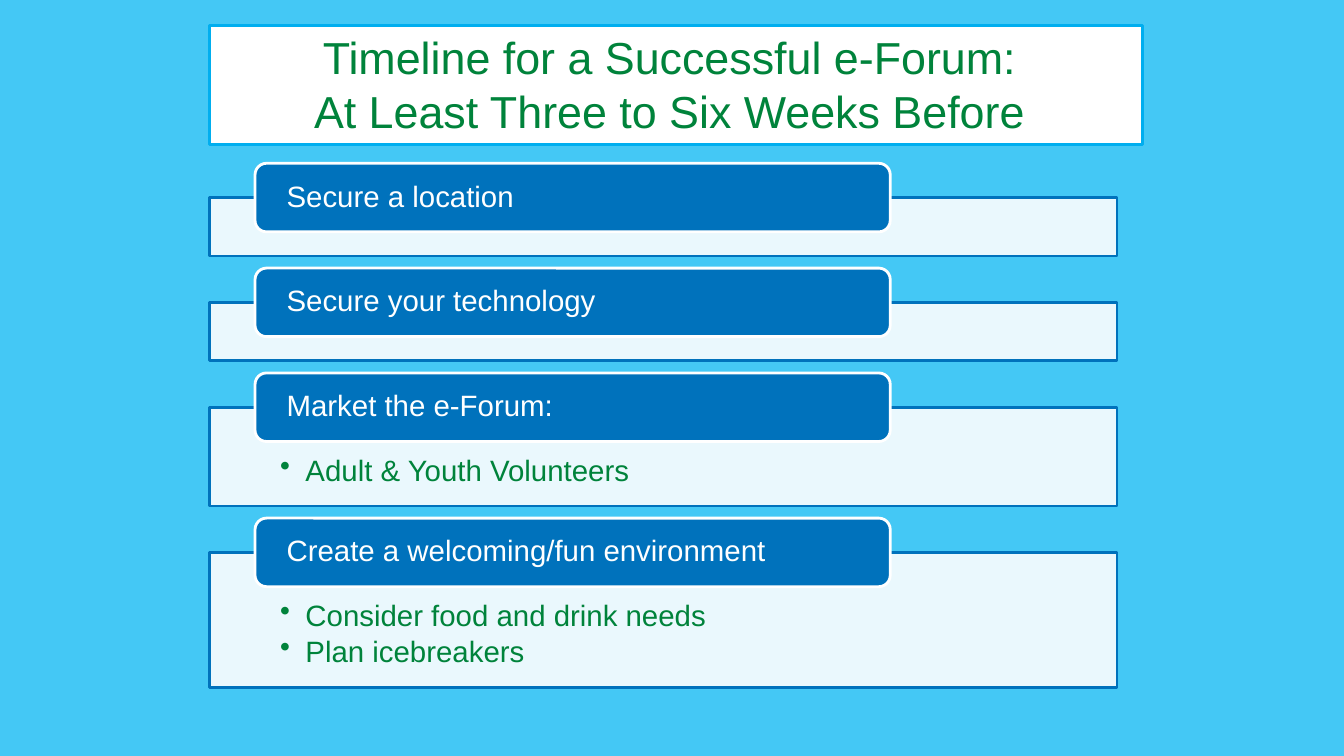
from lxml.etree import SubElement
from pptx import Presentation
from pptx.dml.color import RGBColor
from pptx.enum.shapes import MSO_SHAPE
from pptx.enum.text import MSO_ANCHOR, PP_ALIGN
from pptx.oxml.ns import qn
from pptx.util import Inches, Pt

SKY, CYAN, BLUE, GREEN, WHITE = "44C8F5", "00AEEF", "0072BC", "00833B", "FFFFFF"
LEFT, WIDTH, GAP = 2.08, 9, 0.46
PILL_HEIGHT, PILL_RISE = 0.68, 0.34
TITLE = "Timeline for a Successful e-Forum: \vAt Least Three to Six Weeks Before "
SECTIONS = [
    ("Secure a location", [], 0.58),
    ("Secure your technology", [], 0.58),
    ("Market the e-Forum:", ["Adult & Youth Volunteers"], 0.98),
    ("Create a welcoming/fun environment",
     ["Consider food and drink needs", "Plan icebreakers"], 1.34),
]


def paint(color_format, color):
    color_format.rgb = RGBColor.from_string(color)


def add_panel(s, kind, box, fill, line):
    sp = s.shapes.add_shape(kind, *[Inches(v) for v in box])
    sp.shadow.inherit = False
    sp.fill.solid()
    paint(sp.fill.fore_color, fill)
    paint(sp.line.color, line)
    sp.line.width = Pt(2)
    return sp


def write(sp, lines, size, color, insets, frame=None, para=None):
    tf = sp.text_frame
    sides = ("margin_left", "margin_top", "margin_right", "margin_bottom")
    formats = dict(zip(sides, [Inches(v) for v in insets]))
    for name, value in {**formats, "word_wrap": True, **(frame or {})}.items():
        setattr(tf, name, value)
    for i, line in enumerate(lines):
        p = tf.paragraphs[0] if i == 0 else tf.add_paragraph()
        p.text = line
        for name, value in (para or {}).items():
            setattr(p, name, value)
        for r in p.runs:
            for name, value in {"name": "Arial", "size": Pt(size)}.items():
                setattr(r.font, name, value)
            paint(r.font.color, color)
    return tf.paragraphs


def add_bullet(p, color):
    pPr = p._p.get_or_add_pPr()
    pPr.set("marL", str(Inches(0.25)))
    pPr.set("indent", str(-Inches(0.25)))
    SubElement(SubElement(pPr, qn("a:buClr")), qn("a:srgbClr"), val=color)
    SubElement(pPr, qn("a:buChar"), char="•")


def add_title(s, box):
    sp = add_panel(s, MSO_SHAPE.RECTANGLE, box, WHITE, CYAN)
    write(sp, [TITLE], 32, GREEN, (0.1, 0.05, 0.1, 0.05),
          {"vertical_anchor": MSO_ANCHOR.TOP}, {"alignment": PP_ALIGN.CENTER})


def add_section(s, box, heading, items):
    left, top, width, height = box
    body = add_panel(s, MSO_SHAPE.RECTANGLE, box, WHITE, BLUE)
    fill_color = body._element.spPr.find(qn("a:solidFill"))[0]
    SubElement(fill_color, qn("a:alpha"), val="89000")
    para = {"alignment": PP_ALIGN.LEFT, "line_spacing": 0.9}
    if items:
        paragraphs = write(body, items, 21, GREEN, (0.7, 0.48, 0.7, 0.16),
                           {"vertical_anchor": MSO_ANCHOR.TOP}, {**para, "level": 1})
        for i, p in enumerate(paragraphs):
            p.space_before = Pt(3.1 if i else 0)
            add_bullet(p, GREEN)
    pill = add_panel(s, MSO_SHAPE.ROUNDED_RECTANGLE,
                     (left + width * 0.05, top - PILL_RISE, width * 0.7, PILL_HEIGHT),
                     BLUE, WHITE)
    write(pill, [heading], 21, WHITE, (0.28, 0, 0.28, 0),
          {"vertical_anchor": MSO_ANCHOR.MIDDLE}, para)


def main():
    prs = Presentation()
    prs.slide_width, prs.slide_height = Inches(13.33), Inches(7.5)
    s = prs.slides.add_slide(prs.slide_layouts[6])
    s.background.fill.solid()
    paint(s.background.fill.fore_color, SKY)
    add_title(s, (LEFT, 0.25, 9.25, 1.18))
    top = 1.96
    for heading, items, height in SECTIONS:
        add_section(s, (LEFT, top, WIDTH, height), heading, items)
        top += height + GAP
    prs.save("out.pptx")


if __name__ == "__main__":
    main()
